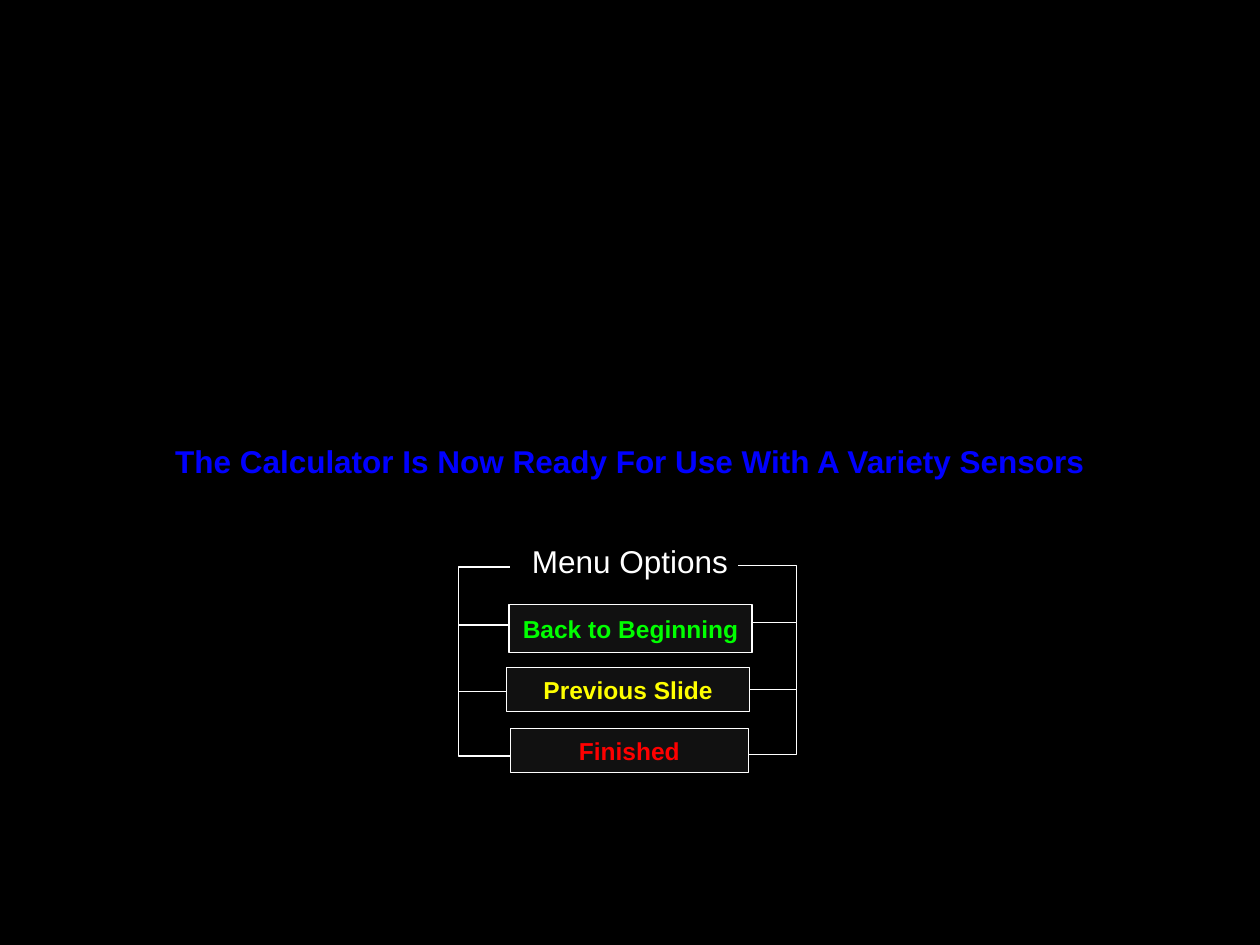
"""Build the closing slide with its bracketed menu of options."""
from pptx import Presentation
from pptx.dml.color import RGBColor
from pptx.enum.shapes import MSO_SHAPE
from pptx.enum.text import MSO_ANCHOR, PP_ALIGN
from pptx.util import Inches, Pt

RECT = MSO_SHAPE.RECTANGLE
TOP, MIDDLE = MSO_ANCHOR.TOP, MSO_ANCHOR.MIDDLE
LEFT, CENTER = PP_ALIGN.LEFT, PP_ALIGN.CENTER

THEME = {
    "font": "Arial", "heading": 18, "button": 14, "line": 0.75,
    "back": "000000", "fill": "111111", "white": "FFFFFF",
    "blue": "0000FF", "green": "00FF00", "yellow": "FFFF00", "red": "FF0000",
}


def color(name):
    return RGBColor.from_string(THEME[name])


def write(sp, text, size, ink, bold, align, anchor):
    tf = sp.text_frame
    for name, value in {"word_wrap": False, "vertical_anchor": anchor}.items():
        setattr(tf, name, value)
    p = tf.paragraphs[0]
    p.alignment = align
    r = p.add_run()
    r.text = text
    font = {"name": THEME["font"], "size": Pt(THEME[size]), "bold": bold}
    for name, value in font.items():
        setattr(r.font, name, value)
    r.font.color.rgb = color(ink)


prs = Presentation()
prs.slide_width, prs.slide_height = Inches(10), Inches(7.5)
s = prs.slides.add_slide(prs.slide_layouts[5])
s.background.fill.solid()
s.background.fill.fore_color.rgb = color("back")

title = s.shapes.title
place = {"left": 1.29, "top": 3.46, "width": 7.45, "height": 0.4}
for name, value in place.items():
    setattr(title, name, Inches(value))
write(title, "The Calculator Is Now Ready For Use With A Variety Sensors",
      "heading", "blue", True, LEFT, TOP)

outlined = []
brackets = [
    (3.64, [(4.14, 6), (4.08, 5.49), (4.15, 4.96), (4.05, 4.5)]),
    (6.32, [(5.76, 5.99), (5.83, 5.47), (5.75, 4.94), (5.86, 4.49)]),
]
for spine, arms in brackets:
    points = []
    for tip, y in arms:
        points += [(spine, y), (tip, y), (spine, y)]
    points = [(Inches(x), Inches(y)) for x, y in points[1:-1]]
    builder = s.shapes.build_freeform(*points[0])
    builder.add_line_segments(points[1:], close=False)
    sp = builder.convert_to_shape()
    sp.fill.background()
    outlined.append(sp)

menu = s.shapes.add_textbox(Inches(4.12), Inches(4.25), Inches(1.76), Inches(0.4))
write(menu, "Menu Options", "heading", "white", False, CENTER, TOP)

buttons = [
    ("Back to Beginning", "green", (4.04, 4.8, 1.93, 0.38)),
    ("Previous Slide", "yellow", (4.02, 5.3, 1.93, 0.35)),
    ("Finished", "red", (4.05, 5.78, 1.89, 0.35)),
]
for text, ink, box in buttons:
    sp = s.shapes.add_shape(RECT, *map(Inches, box))
    sp.fill.solid()
    sp.fill.fore_color.rgb = color("fill")
    write(sp, text, "button", ink, True, CENTER, MIDDLE)
    outlined.append(sp)

for sp in outlined:
    sp.shadow.inherit = False
    sp.line.color.rgb = color("white")
    sp.line.width = Pt(THEME["line"])

prs.save("out.pptx")
